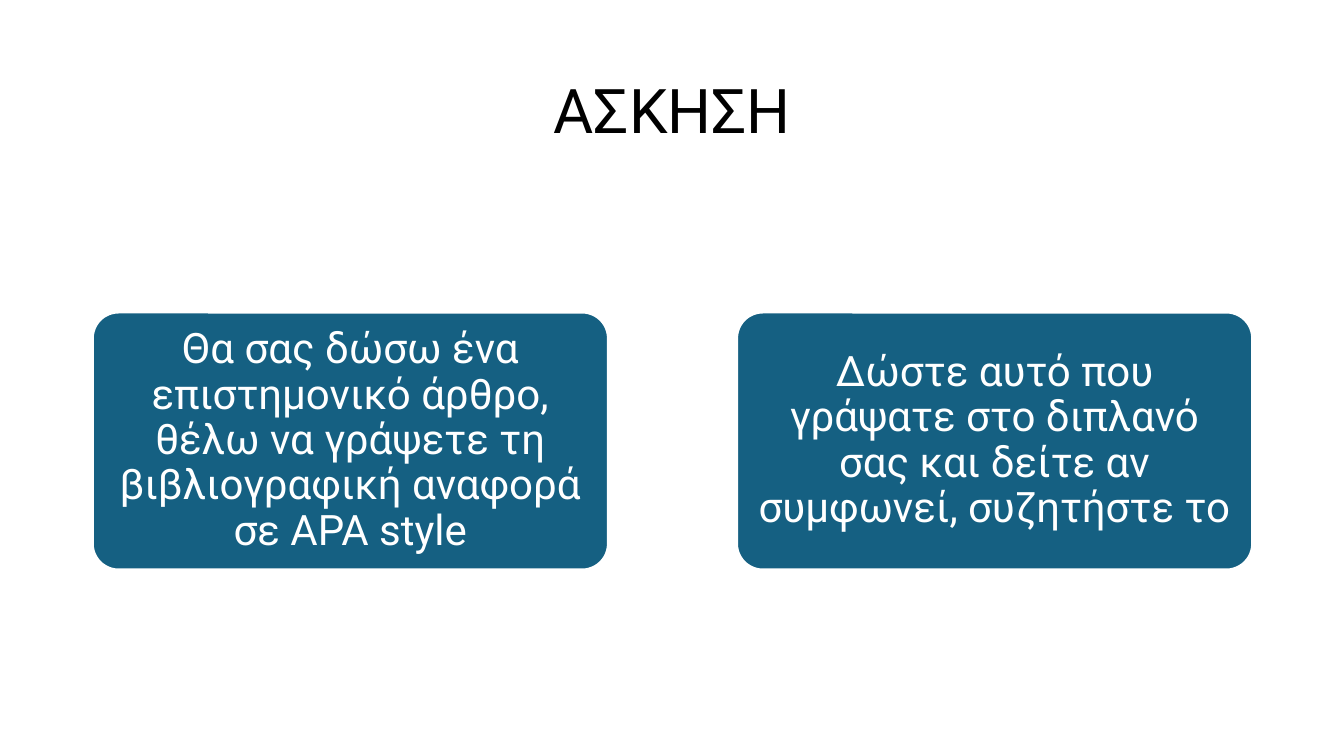
from dataclasses import dataclass

from pptx import Presentation
from pptx import util as u
from pptx.dml.color import RGBColor
from pptx.enum import shapes, text


@dataclass(frozen=True)
class Theme:
    font: str = "Roboto"
    ink: str = "000000"
    paper: str = "FFFFFF"
    card: str = "156082"
    title_size: int = 44
    card_size: int = 30
    line_spacing: float = 0.9
    outline: float = 1.5


class ExerciseSlide:
    def __init__(self, slide, theme):
        self.slide = slide
        self.theme = theme

    def set_wording(self, frame, wording, size, colour):
        """Fill a frame with one centred paragraph."""
        frame.word_wrap = True
        frame.vertical_anchor = text.MSO_ANCHOR.MIDDLE
        paragraph = frame.paragraphs[0]
        paragraph.text = wording
        paragraph.alignment = text.PP_ALIGN.CENTER
        paragraph.line_spacing = self.theme.line_spacing
        paragraph.font.name = self.theme.font
        paragraph.font.size = u.Pt(size)
        paragraph.font.color.rgb = RGBColor.from_string(colour)

    def title(self, wording, *box):
        heading = self.slide.shapes.add_textbox(*map(u.Inches, box))
        self.set_wording(heading.text_frame, wording, self.theme.title_size, self.theme.ink)

    def card(self, wording, *box):
        card = self.slide.shapes.add_shape(
            shapes.MSO_SHAPE.ROUNDED_RECTANGLE, *map(u.Inches, box))
        card.adjustments[0] = 0.1
        card.shadow.inherit = False
        card.fill.solid()
        card.fill.fore_color.rgb = RGBColor.from_string(self.theme.card)
        card.line.color.rgb = RGBColor.from_string(self.theme.paper)
        card.line.width = u.Pt(self.theme.outline)
        frame = card.text_frame
        frame.margin_left = frame.margin_right = u.Inches(0.06)
        frame.margin_top = frame.margin_bottom = u.Inches(0.04)
        self.set_wording(frame, wording, self.theme.card_size, self.theme.paper)


STEPS = (
    "Θα σας δώσω ένα επιστημονικό άρθρο, θέλω να γράψετε τη "
    "βιβλιογραφική αναφορά σε ΑPA style",
    "Δώστε αυτό που γράψατε στο διπλανό σας και δείτε αν "
    "συμφωνεί, συζητήστε το",
)
MARGIN, CONTENT_WIDTH = 0.92, 11.5
CARD_WIDTH, CARD_HEIGHT, CARD_TOP = 5.11, 2.55, 3.1


def main():
    deck = Presentation()
    deck.slide_width, deck.slide_height = u.Inches(13.33), u.Inches(7.5)
    exercise = ExerciseSlide(deck.slides.add_slide(deck.slide_layouts[6]), Theme())

    # Heading
    exercise.title("ΑΣΚΗΣΗ", MARGIN, 0.4, CONTENT_WIDTH, 1.45)

    # Steps, spread from margin to margin
    pitch = (CONTENT_WIDTH - CARD_WIDTH) / (len(STEPS) - 1)
    for index, step in enumerate(STEPS):
        exercise.card(step, MARGIN + index * pitch, CARD_TOP, CARD_WIDTH, CARD_HEIGHT)

    deck.save("out.pptx")


if __name__ == "__main__":
    main()
